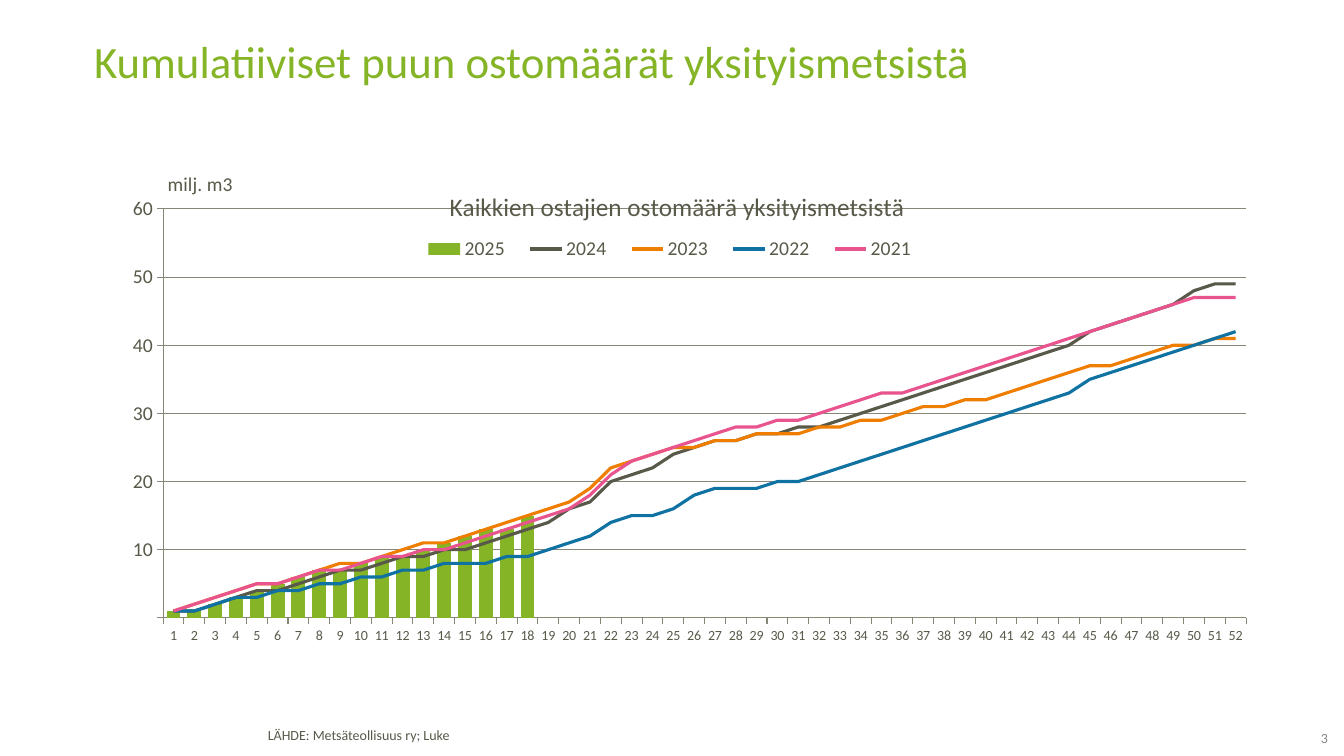
from lxml import etree
from pptx import Presentation
from pptx.chart.data import CategoryChartData
from pptx.dml.color import RGBColor
from pptx.enum.chart import XL_CHART_TYPE, XL_LEGEND_POSITION, XL_MARKER_STYLE, XL_TICK_MARK
from pptx.enum.text import MSO_ANCHOR, MSO_AUTO_SIZE, PP_ALIGN
from pptx.oxml import parse_xml
from pptx.oxml.ns import nsdecls, qn
from pptx.util import Pt

COLUMN = XL_CHART_TYPE.COLUMN_CLUSTERED
LEGEND_RIGHT = XL_LEGEND_POSITION.RIGHT
NO_MARKER = XL_MARKER_STYLE.NONE
TICK_OUT, TICK_NONE = XL_TICK_MARK.OUTSIDE, XL_TICK_MARK.NONE
TOP, MIDDLE = MSO_ANCHOR.TOP, MSO_ANCHOR.MIDDLE
LEFT, RIGHT = PP_ALIGN.LEFT, PP_ALIGN.RIGHT

# Content
FONT, TEXT, GRID = "Calibri", "59594A", "878778"
MILLION = 1_000_000
TITLE = "Kumulatiiviset puun ostomäärät yksityismetsistä"
SOURCE = "LÄHDE: Metsäteollisuus ry; Luke"
PAGE_NUMBER = "3"
CHART_TITLE = "Kaikkien ostajien ostomäärä yksityismetsistä"
UNIT = "milj. m3"
WEEKS = 52
# Year, colour, cumulative volume by week in millions
SERIES = [
    ("2025", "85B526", [1, 1, 2, 3, 4, 5, 6, 7, 7, 8, 9, 9, 10, 11, 12, 13, 13, 15]
     + [0] * 34),
    ("2024", "59594A", [
        1, 1, 2, 3, 4, 4, 5, 6, 7, 7, 8, 9, 9, 10, 10, 11, 12, 13, 14, 16, 17, 20, 21, 22, 24, 25,
        26, 26, 27, 27, 28, 28, 29, 30, 31, 32, 33, 34, 35, 36, 37, 38, 39, 40, 42, 43, 44, 45,
        46, 48, 49, 49]),
    ("2023", "EF7D00", [
        1, 2, 3, 4, 5, 5, 6, 7, 8, 8, 9, 10, 11, 11, 12, 13, 14, 15, 16, 17, 19, 22, 23, 24, 25, 25,
        26, 26, 27, 27, 27, 28, 28, 29, 29, 30, 31, 31, 32, 32, 33, 34, 35, 36, 37, 37, 38, 39,
        40, 40, 41, 41]),
    ("2022", "0F72A2", [
        1, 1, 2, 3, 3, 4, 4, 5, 5, 6, 6, 7, 7, 8, 8, 8, 9, 9, 10, 11, 12, 14, 15, 15, 16, 18,
        19, 19, 19, 20, 20, 21, 22, 23, 24, 25, 26, 27, 28, 29, 30, 31, 32, 33, 35, 36, 37, 38,
        39, 40, 41, 42]),
    ("2021", "E8548D", [
        1, 2, 3, 4, 5, 5, 6, 7, 7, 8, 9, 9, 10, 10, 11, 12, 13, 14, 15, 16, 18, 21, 23, 24, 25, 26,
        27, 28, 28, 29, 29, 30, 31, 32, 33, 33, 34, 35, 36, 37, 38, 39, 40, 41, 42, 43, 44, 45,
        46, 47, 47, 47]),
]

# Places in px: left, top, width, height
SLIDE_SIZE = (1344, 756)
TITLE_BOX = (84, 39, 1178, 99)
SOURCE_BOX = (258, 724, 724, 27)
NUMBER_BOX = (1275, 730, 53, 19)
CHART_BOX = (84, 158, 1178, 520)
PLOT_BOX = (163, 209, 1083, 409)
LEGEND_BOX = (410, 233, 520, 32)
CHART_TITLE_AT = (445, 185)
UNIT_AT = (164, 167)
SCALE = 12192000 / SLIDE_SIZE[0]


def emu(box):
    return [round(length * SCALE) for length in box]


def color(value):
    return RGBColor.from_string(value)


def set_all(target, values):
    for name, value in values.items():
        setattr(target, name, value)


def set_font(font, size, ink=TEXT):
    set_all(font, {"name": FONT, "size": Pt(size), "bold": False})
    font.color.rgb = color(ink)


def write(shape, text, size, ink, paragraph_format, frame_format):
    frame = shape.text_frame
    set_all(frame, {"word_wrap": True, "auto_size": MSO_AUTO_SIZE.NONE, **frame_format})
    paragraph = frame.paragraphs[0]
    set_all(paragraph, paragraph_format)
    run = paragraph.add_run()
    run.text = text
    set_font(run.font, size, ink)


def place(element, position, box, inner=False):
    """Give a chart part a manual layout, as fractions of the chart."""
    for old in element.findall(qn("c:layout")):
        element.remove(old)
    left, top, width, height = CHART_BOX
    fractions = zip("xywh", box, (left, top, 0, 0), (width, height) * 2)
    modes = "".join(f'<c:{key}Mode val="edge"/>' for key in "xy")
    values = "".join(f'<c:{key} val="{(length - start) / whole:.4f}"/>'
                     for key, length, start, whole in fractions)
    target = '<c:layoutTarget val="inner"/>' if inner else ""
    element.insert(position, parse_xml(
        f'<c:layout {nsdecls("c")}><c:manualLayout>{target}{modes}{values}'
        '</c:manualLayout></c:layout>'))


def set_title(owner, text, size, at):
    """Write the title of the chart or of an axis, level and unbold."""
    frame = owner.text_frame
    frame.text = text
    set_font(frame.paragraphs[0].runs[0].font, size)
    frame.word_wrap = False
    body = frame._txBody.bodyPr
    body.set("rot", "0")
    body.set("vert", "horz")
    place(owner._element, 1, at)


def turn_into_lines(chart):
    """Move every series but the first from the columns to a line plot."""
    columns = chart._chartSpace.find(".//" + qn("c:barChart"))
    lines = parse_xml(f'<c:lineChart {nsdecls("c")}><c:grouping val="standard"/>'
                      '<c:varyColors val="0"/></c:lineChart>')
    for series in columns.findall(qn("c:ser"))[1:]:
        for flag in series.findall(qn("c:invertIfNegative")):
            series.remove(flag)
        lines.append(series)
    etree.SubElement(lines, qn("c:marker")).set("val", "1")
    for axis in columns.findall(qn("c:axId")):
        etree.SubElement(lines, qn("c:axId")).set("val", axis.get("val"))
    columns.addnext(lines)


def add_volume_chart(slide):
    data = CategoryChartData()
    data.categories = [str(week) for week in range(1, WEEKS + 1)]
    for year, _, volumes in SERIES:
        data.add_series(year, [volume * MILLION for volume in volumes])
    chart = slide.shapes.add_chart(COLUMN, *emu(CHART_BOX), data).chart
    set_font(chart.font, 10)
    turn_into_lines(chart)

    # Columns and lines
    columns, lines = chart.plots
    set_all(columns, {"gap_width": 50, "vary_by_categories": False})
    fill = columns.series[0].format.fill
    fill.solid()
    fill.fore_color.rgb = color(SERIES[0][1])
    for series, (_, ink, _) in zip(lines.series, SERIES[1:]):
        series.smooth = False
        series.marker.style = NO_MARKER
        series.format.line.width = Pt(2.25)
        series.format.line.color.rgb = color(ink)

    # Axes
    weeks, volume = chart.category_axis, chart.value_axis
    set_all(volume, {"minimum_scale": 0, "maximum_scale": 60 * MILLION,
                     "major_unit": 10 * MILLION, "has_major_gridlines": True})
    set_all(volume.tick_labels, {"number_format": "#,,", "number_format_is_linked": False})
    for axis, size in ((weeks, 10), (volume, 14)):
        set_all(axis, {"major_tick_mark": TICK_OUT, "minor_tick_mark": TICK_NONE})
        set_font(axis.tick_labels.font, size)
    for line in (weeks.format.line, volume.format.line, volume.major_gridlines.format.line):
        line.width = Pt(0.75)
        line.color.rgb = color(GRID)
    skip = parse_xml(f'<c:tickLblSkip {nsdecls("c")} val="1"/>')
    weeks._element.find(qn("c:noMultiLvlLbl")).addprevious(skip)

    # Titles, legend and plot area
    set_title(volume.axis_title, UNIT, 14, UNIT_AT)
    set_title(chart.chart_title, CHART_TITLE, 18, CHART_TITLE_AT)
    chart.has_legend = True
    set_all(chart.legend, {"position": LEGEND_RIGHT, "include_in_layout": False})
    set_font(chart.legend.font, 14)
    place(chart.legend._element, 1, LEGEND_BOX)
    place(chart._chartSpace.find(".//" + qn("c:plotArea")), 0, PLOT_BOX, inner=True)


def main():
    presentation = Presentation()
    presentation.slide_width, presentation.slide_height = emu(SLIDE_SIZE)
    slide = presentation.slides.add_slide(presentation.slide_layouts[5])

    # Title
    title = slide.shapes.title
    set_all(title, dict(zip(("left", "top", "width", "height"), emu(TITLE_BOX))))
    write(title, TITLE, 32, "85B526", {"alignment": LEFT, "line_spacing": 0.8},
          {"vertical_anchor": TOP})

    add_volume_chart(slide)

    # Source and page number
    write(slide.shapes.add_textbox(*emu(SOURCE_BOX)), SOURCE, 10, "58594A",
          {"line_spacing": 0.85}, {"vertical_anchor": TOP})
    write(slide.shapes.add_textbox(*emu(NUMBER_BOX)), PAGE_NUMBER, 10, "878787",
          {"alignment": RIGHT},
          {"vertical_anchor": MIDDLE, "margin_left": 0, "margin_right": 0,
           "margin_top": 0, "margin_bottom": round(4 * SCALE)})

    presentation.save("out.pptx")


if __name__ == "__main__":
    main()
